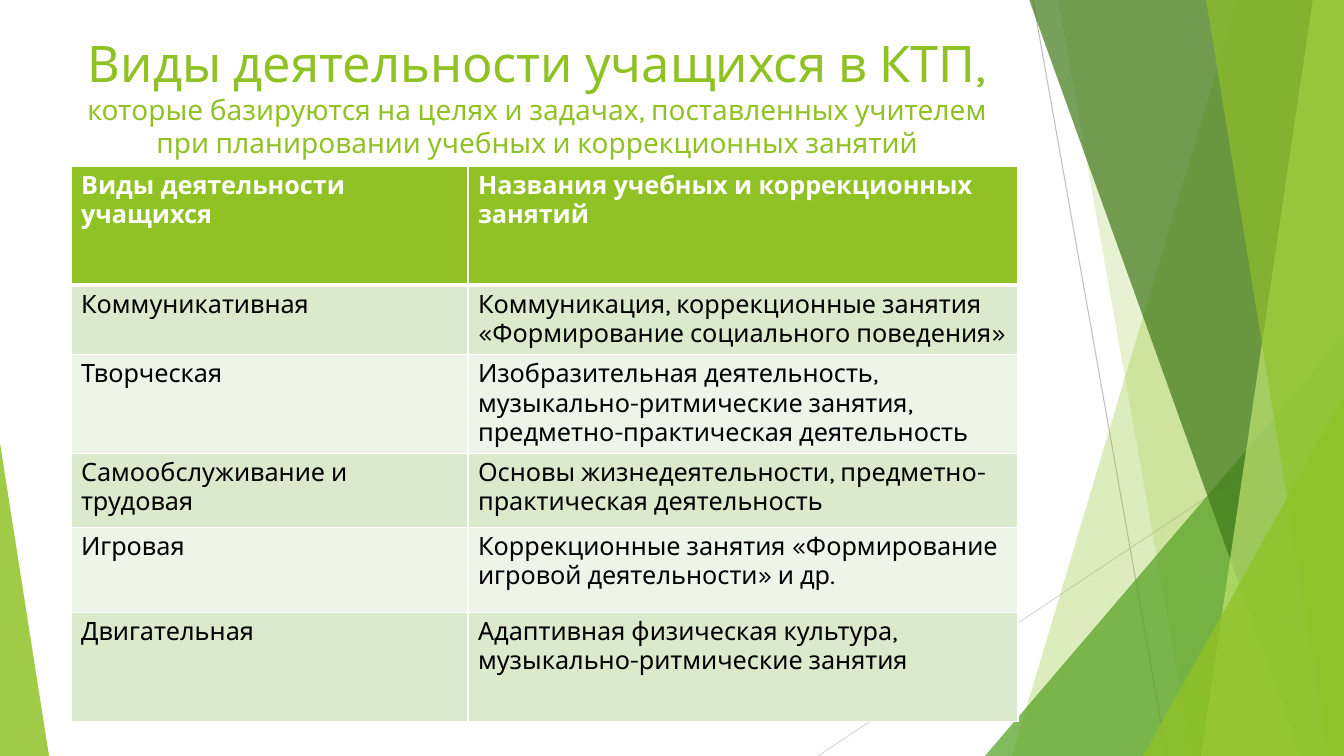
import pptx
import pptx.util
import pptx.dml.color
import pptx.enum.shapes
import pptx.enum.text
import pptx.oxml.ns
from lxml import etree

WIDTH, HEIGHT = 1344, 756
FONT = "Karla"
GREEN, WHITE, BLACK = "90C226", "FFFFFF", "000000"
BANDS = ["DBE9CD", "EEF4E8"]

HEADING = [
    ("Виды деятельности учащихся в КТП, ", 36),
    ("которые базируются на целях и задачах, поставленных учителем "
     "при планировании учебных и коррекционных занятий", 20),
]
ACTIVITIES = [
    ("Виды деятельности учащихся", "Названия учебных и коррекционных занятий"),
    ("Коммуникативная",
     "Коммуникация, коррекционные занятия «Формирование социального поведения»"),
    ("Творческая",
     "Изобразительная деятельность, музыкально-ритмические занятия, "
     "предметно-практическая деятельность"),
    ("Самообслуживание и трудовая",
     "Основы жизнедеятельности, предметно-практическая деятельность"),
    ("Игровая", "Коррекционные занятия «Формирование игровой деятельности» и др."),
    ("Двигательная", "Адаптивная физическая культура, музыкально-ритмические занятия"),
]
COLUMN_WIDTHS = [397, 550]
ROW_HEIGHTS = [119, 69, 99, 74, 85, 109]

# start x, start y, end x, end y, colour
RAYS = [(1033, 0, 1167, HEIGHT, "BFBFBF"), (WIDTH, 406, 818, HEIGHT, "D9D9D9")]
# Shards reach the right edge: top-left x, bottom-left x, colour, opacity %
# Corners are triangles: left, top, width, apex position, colour, opacity %
DECOR = [
    ("shard", 1238, 1012, GREEN, 30),
    ("shard", 1058, 1192, GREEN, 20),
    ("corner", 985, 336, 359, 1, "54A021", 72),
    ("shard", 1029, 1301, "3F7819", 70),
    ("shard", 1313, 1201, "C0E474", 70),
    ("shard", 1206, 1329, GREEN, 65),
    ("corner", 1143, 396, 201, 1, GREEN, 80),
    ("corner", 0, 443, 49, 0, GREEN, 85),
]


def px(length):
    return pptx.util.Emu(round(length * 914400 / 100.8))


def rgb(colour):
    return pptx.dml.color.RGBColor.from_string(colour)


def add_xml(parent, tag, **attributes):
    return etree.SubElement(parent, pptx.oxml.ns.qn(tag), attributes)


def paint(shape, colour, opacity):
    shape.shadow.inherit = False
    shape.line.fill.background()
    shape.fill.solid()
    shape.fill.fore_color.rgb = rgb(colour)
    swatch = next(shape.fill._xPr.iter(pptx.oxml.ns.qn("a:srgbClr")))
    add_xml(swatch, "a:alpha", val=str(opacity * 1000))


def add_ray(shapes, x1, y1, x2, y2, colour):
    ray = shapes.add_connector(pptx.enum.shapes.MSO_CONNECTOR.STRAIGHT,
                               px(x1), px(y1), px(x2), px(y2))
    ray.line.color.rgb = rgb(colour)
    ray.line.width = pptx.util.Pt(0.75)
    add_xml(ray._element.spPr, "a:effectLst")


def add_shard(shapes, top_x, bottom_x, colour, opacity):
    outline = shapes.build_freeform(top_x, -1, scale=px(1000) / 1000)
    outline.add_line_segments([(WIDTH, -1), (WIDTH, HEIGHT), (bottom_x, HEIGHT)])
    paint(outline.convert_to_shape(), colour, opacity)


def add_corner(shapes, left, top, width, apex, colour, opacity):
    corner = shapes.add_shape(pptx.enum.shapes.MSO_SHAPE.ISOSCELES_TRIANGLE,
                              px(left), px(top), px(width), px(HEIGHT - top))
    corner.adjustments[0] = apex
    paint(corner, colour, opacity)


def add_text(paragraph, text, size, colour, bold=False):
    run = paragraph.add_run()
    run.text = text
    run.font.name = FONT
    run.font.size = pptx.util.Pt(size)
    run.font.bold = bold
    run.font.color.rgb = rgb(colour)


def add_borders(cell, top, bottom):
    """Draw white borders, 1 pt at the sides and the given points above and below."""
    properties = cell._tc.get_or_add_tcPr()
    for side, points in [("L", 1), ("R", 1), ("T", top), ("B", bottom)]:
        border = add_xml(properties, "a:ln" + side, w=str(pptx.util.Pt(points)))
        add_xml(add_xml(border, "a:solidFill"), "a:srgbClr", val=WHITE)


def fill_title(title):
    title.left, title.top, title.width, title.height = px(63), px(23), px(948), px(145)
    title.text_frame.word_wrap = True
    title.text_frame.auto_size = pptx.enum.text.MSO_AUTO_SIZE.NONE
    title.text_frame.vertical_anchor = pptx.enum.text.MSO_ANCHOR.MIDDLE
    paragraph = title.text_frame.paragraphs[0]
    paragraph.alignment = pptx.enum.text.PP_ALIGN.CENTER
    for text, size in HEADING:
        add_text(paragraph, text, size, GREEN)


def add_activities(shapes):
    table = shapes.add_table(len(ACTIVITIES), len(COLUMN_WIDTHS), px(71), px(166),
                             px(sum(COLUMN_WIDTHS)), px(sum(ROW_HEIGHTS))).table
    for column, width in zip(table.columns, COLUMN_WIDTHS):
        column.width = px(width)
    for i, (row, height, texts) in enumerate(zip(table.rows, ROW_HEIGHTS, ACTIVITIES)):
        row.height = px(height)
        header = i == 0
        for cell, text in zip(row.cells, texts):
            add_borders(cell, top=3 if i == 1 else 1, bottom=3 if header else 1)
            cell.fill.solid()
            cell.fill.fore_color.rgb = rgb(GREEN if header else BANDS[(i - 1) % 2])
            add_text(cell.text_frame.paragraphs[0], text, 18,
                     WHITE if header else BLACK, bold=header)


def main():
    presentation = pptx.Presentation()
    presentation.slide_width, presentation.slide_height = px(WIDTH), px(HEIGHT)
    slide = presentation.slides.add_slide(presentation.slide_layouts[5])
    for ray in RAYS:
        add_ray(slide.shapes, *ray)
    makers = {"shard": add_shard, "corner": add_corner}
    for kind, *geometry in DECOR:
        makers[kind](slide.shapes, *geometry)
    fill_title(slide.shapes.title)
    add_activities(slide.shapes)
    presentation.save("out.pptx")


if __name__ == "__main__":
    main()
